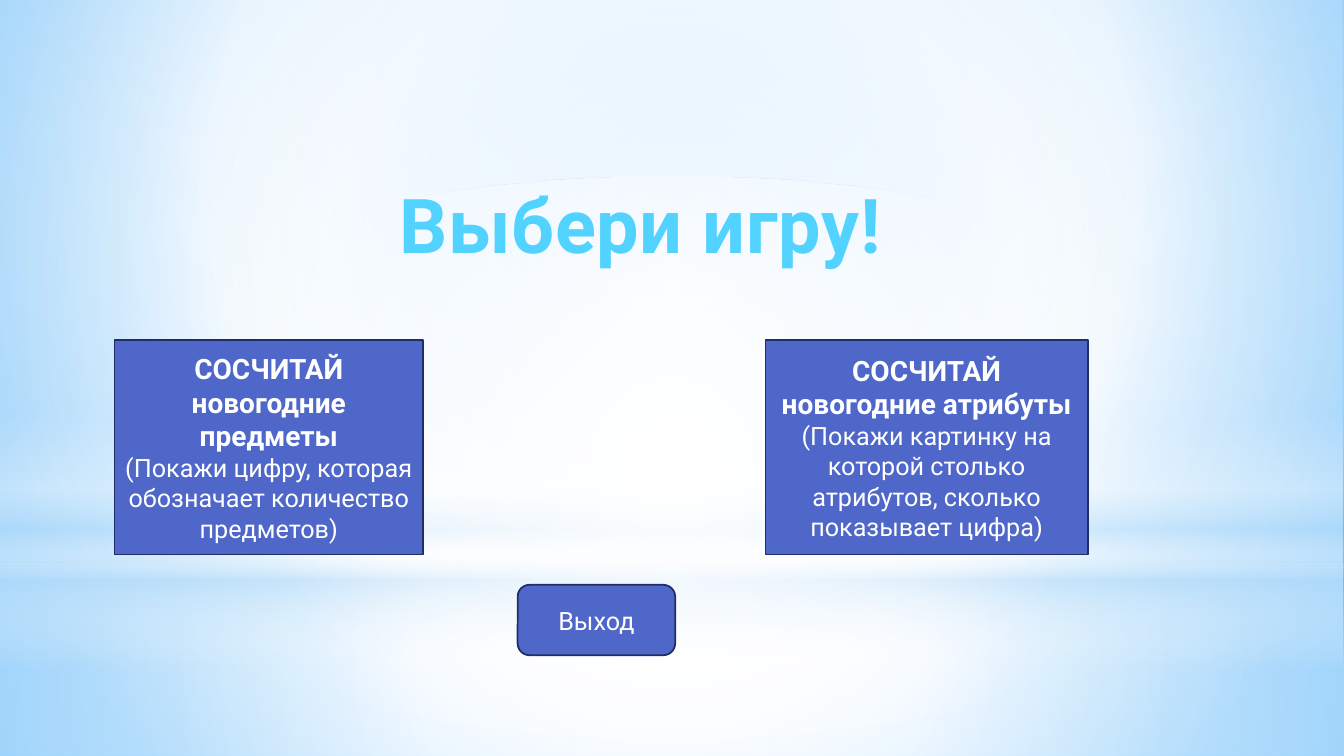
"""Build the game menu slide with two game buttons and an exit button."""
from lxml.etree import SubElement
from pptx import Presentation
from pptx.dml.color import RGBColor as Color
from pptx.enum.shapes import MSO_SHAPE as Preset
from pptx.enum.text import MSO_ANCHOR as Anchor, MSO_AUTO_SIZE as AutoSize, PP_ALIGN as Align
from pptx.oxml.ns import qn
from pptx.util import Pt

PX = 9525
THEME = {
    "font": "Roboto",
    "white": "FFFFFF",
    "mist": "B4DCFA",
    "sky": "9ED5FF",
    "deep_sky": "5BB9FF",
    "title_top": "52D2FF",
    "title_bottom": "20A0CE",
    "button": "4E67C8",
    "outline": "1F2E69",
    "title_size": 54,
    "heading_size": 20,
    "body_size": 18,
}
WHITE, MIST = THEME["white"], THEME["mist"]
CENTER = (50, 50, 50, 50)


def apply_gradient(parent, stops, focus=None):
    """Swap the solid fill for a circular gradient, or a vertical one without focus."""
    solid = parent.find(qn("a:solidFill"))
    gradient = parent.makeelement(qn("a:gradFill"), {"rotWithShape": "1"})
    parent.replace(solid, gradient)
    stop_list = SubElement(gradient, qn("a:gsLst"))
    for position, color, opacity in stops:
        stop = SubElement(stop_list, qn("a:gs"), pos=str(position * 1000))
        tint = SubElement(stop, qn("a:srgbClr"), val=color)
        if opacity < 100:
            SubElement(tint, qn("a:alpha"), val=str(opacity * 1000))
    if focus:
        circle = SubElement(gradient, qn("a:path"), {"path": "circle"})
        edges = {side: str(share * 1000) for side, share in zip("ltrb", focus)}
        SubElement(circle, qn("a:fillToRect"), edges)
    else:
        SubElement(gradient, qn("a:lin"), ang="5400000", scaled="0")


def add_span(para, text, size, bold):
    """Add one centred white run."""
    para.alignment = Align.CENTER
    span = para.add_run()
    span.text = text
    span.font.name = THEME["font"]
    span.font.size = Pt(size)
    span.font.bold = bold
    span.font.color.rgb = Color.from_string(WHITE)
    return span


deck = Presentation()
deck.slide_width, deck.slide_height = 1280 * PX, 720 * PX
page = deck.slides.add_slide(deck.slide_layouts[6])

page.background.fill.solid()
apply_gradient(
    page.element.find(".//" + qn("p:bgPr")),
    [(0, THEME["sky"], 100), (60, WHITE, 100), (100, THEME["deep_sky"], 100)],
    (20, 10, 20, 60),
)

glows = [
    (Preset.RECTANGLE, 536, 184, [(0, WHITE, 91), (37, WHITE, 76), (100, MIST, 79)], CENTER),
    (Preset.RECTANGLE, 0, 536, [(0, WHITE, 89), (48, WHITE, 62), (100, MIST, 79)], CENTER),
    (Preset.RECTANGLE, 396, 240,
     [(0, WHITE, 0), (29, WHITE, 30), (45, MIST, 40), (55, WHITE, 26), (65, MIST, 60), (100, WHITE, 0)],
     None),
    (Preset.OVAL, 168, 536, [(0, WHITE, 100), (56, WHITE, 0)], CENTER),
]
for preset, top, height, stops, focus in glows:
    glow = page.shapes.add_shape(preset, 0, top * PX, 1280 * PX, height * PX)
    glow.shadow.inherit = False
    glow.line.fill.background()
    glow.fill.solid()
    apply_gradient(glow.element.spPr, stops, focus)

title = page.shapes.add_textbox(348 * PX, 165 * PX, 524 * PX, 97 * PX)
title.text_frame.word_wrap = True
title.text_frame.auto_size = AutoSize.SHAPE_TO_FIT_TEXT
title_span = add_span(title.text_frame.paragraphs[0], "Выбери игру!", THEME["title_size"], True)
title_look = title_span._r.get_or_add_rPr()
title_look.set("spc", "50")
apply_gradient(title_look, [(25, THEME["title_top"], 100), (100, THEME["title_bottom"], 100)])

buttons = [
    (Preset.ACTION_BUTTON_CUSTOM, 109, 324, 294, 204,
     "СОСЧИТАЙ новогодние предметы",
     "(Покажи цифру, которая обозначает количество предметов)"),
    (Preset.ACTION_BUTTON_CUSTOM, 729, 324, 307, 204,
     "СОСЧИТАЙ новогодние атрибуты",
     "(Покажи картинку на которой столько атрибутов, сколько показывает цифра)"),
    (Preset.ROUNDED_RECTANGLE, 493, 557, 150, 67, None, "Выход"),
]
for preset, left, top, width, height, heading, body in buttons:
    box = page.shapes.add_shape(preset, left * PX, top * PX, width * PX, height * PX)
    box.shadow.inherit = False
    box.fill.solid()
    box.fill.fore_color.rgb = Color.from_string(THEME["button"])
    box.line.color.rgb = Color.from_string(THEME["outline"])
    box.line.width = Pt(1.25)
    frame = box.text_frame
    frame.word_wrap = True
    frame.vertical_anchor = Anchor.MIDDLE
    para = frame.paragraphs[0]
    if heading:
        add_span(para, heading, THEME["heading_size"], True)
        para = frame.add_paragraph()
    add_span(para, body, THEME["body_size"], False)

deck.save("out.pptx")
